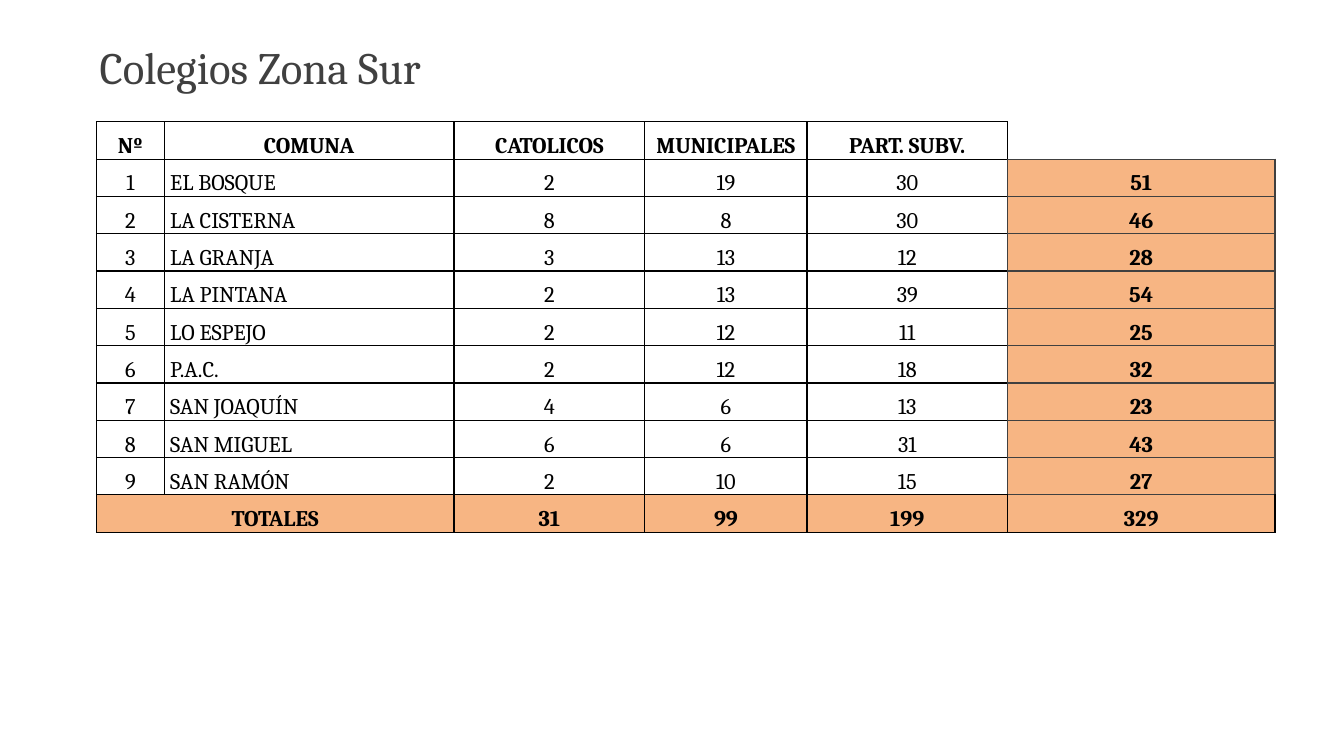
from dataclasses import dataclass
from typing import Optional

from lxml.etree import SubElement
from pptx import Presentation
from pptx.dml.color import RGBColor
from pptx.enum.text import MSO_ANCHOR, PP_ALIGN
from pptx.oxml import parse_xml
from pptx.oxml.ns import nsdecls, qn
from pptx.slide import Slide
from pptx.table import Table
from pptx.text.text import TextFrame
from pptx.util import Cm, Pt


@dataclass(frozen=True)
class Theme:
    font: str = "Cambria"
    black: str = "000000"
    gray: str = "404040"
    orange: str = "F7B583"
    title: int = 32
    body: int = 16
    line: int = 1


@dataclass(frozen=True)
class Comuna:
    name: str
    church: int
    city: int
    private: int

    @property
    def counts(self) -> list[int]:
        return [self.church, self.city, self.private]


THEME = Theme()
HEADS = ["Nº", "COMUNA", "CATOLICOS", "MUNICIPALES", "PART. SUBV."]
COMUNAS = [
    Comuna("EL BOSQUE", 2, 19, 30),
    Comuna("LA CISTERNA", 8, 8, 30),
    Comuna("LA GRANJA", 3, 13, 12),
    Comuna("LA PINTANA", 2, 13, 39),
    Comuna("LO ESPEJO", 2, 12, 11),
    Comuna("P.A.C.", 2, 12, 18),
    Comuna("SAN JOAQUÍN", 4, 6, 13),
    Comuna("SAN MIGUEL", 6, 6, 31),
    Comuna("SAN RAMÓN", 2, 10, 15),
]
WIDTHS = [1.9, 1.71, 7.3, 4.81, 4.09, 5.05, 6.74]
HEIGHT = 0.94
# An empty margin surrounds the data: one row above and below, one column at left.
HEAD, FIRST = 1, 2
TOTAL = FIRST + len(COMUNAS)
ROWS = TOTAL + 2
NAME, SUM = 2, len(WIDTHS) - 1
SIDES = {"lnL": (0, -1), "lnR": (0, 1), "lnT": (-1, 0), "lnB": (1, 0)}


def write(frame: TextFrame, text: str, *, size: int, color: str,
          bold: bool = False, align: PP_ALIGN = PP_ALIGN.LEFT,
          spacing: float = 1.0) -> None:
    para = frame.paragraphs[0]
    para.alignment = align
    para.line_spacing = spacing
    run = para.add_run()
    run.text = text
    run.font.name = THEME.font
    run.font.size = Pt(size)
    run.font.bold = bold
    run.font.color.rgb = RGBColor.from_string(color)


def is_sum(row: int, col: int) -> bool:
    return col == SUM and FIRST <= row < TOTAL


def edge(row: int, col: int, side: str) -> Optional[str]:
    """Colour of a cell side, agreed with the neighbour that shares it."""
    down, right = SIDES[side]
    pair = [(row, col), (row + down, col + right)]
    if any(is_sum(*spot) for spot in pair):
        return THEME.gray
    framed = any(HEAD <= y <= TOTAL and 1 <= x <= SUM and (y, x) != (HEAD, SUM)
                 for y, x in pair)
    return THEME.black if framed else None


def style(table: Table, row: int, col: int) -> None:
    """Set the margins, fill and borders of one cell."""
    cell = table.cell(row, col)
    cell.vertical_anchor = MSO_ANCHOR.BOTTOM
    named = col == NAME and FIRST <= row < TOTAL
    cell.margin_left = Cm(0.15 if named else 0.03)
    cell.margin_right = cell.margin_top = Cm(0.03)
    cell.margin_bottom = 0
    if is_sum(row, col) or (row == TOTAL and col > 0):
        cell.fill.solid()
        cell.fill.fore_color.rgb = RGBColor.from_string(THEME.orange)
    else:
        cell.fill.background()
    props = cell._tc.get_or_add_tcPr()
    for spot, side in enumerate(SIDES):
        color = edge(row, col, side)
        line = parse_xml(f'<a:{side} {nsdecls("a")} w="{Pt(THEME.line)}"/>')
        if color:
            paint = SubElement(line, qn("a:solidFill"))
            SubElement(paint, qn("a:srgbClr"), val=color)
        else:
            SubElement(line, qn("a:noFill"))
        props.insert(spot, line)


def lines() -> list[list[str]]:
    """Texts of the data rows, from the heads to the totals."""
    body = [[i, c.name, *c.counts, sum(c.counts)] for i, c in enumerate(COMUNAS, 1)]
    sums = [sum(col) for col in zip(*(c.counts for c in COMUNAS))]
    last = ["TOTALES", "", *sums, sum(sums)]
    return [[str(item) for item in row] for row in [HEADS, *body, last]]


def add_grid(slide: Slide) -> None:
    shape = slide.shapes.add_table(ROWS, len(WIDTHS), Cm(0.53), Cm(2.13),
                                   Cm(sum(WIDTHS)), Cm(HEIGHT * ROWS))
    table = shape.table
    table.first_row = table.horz_banding = False
    for col, width in zip(table.columns, WIDTHS):
        col.width = Cm(width)
    for line in table.rows:
        line.height = Cm(HEIGHT)
    for row in range(ROWS):
        for col in range(len(WIDTHS)):
            style(table, row, col)
    table.cell(TOTAL, 1).merge(table.cell(TOTAL, NAME))
    for row, texts in enumerate(lines(), HEAD):
        plain = FIRST <= row < TOTAL
        for col, text in enumerate(texts, 1):
            if text:
                left = plain and col == NAME
                write(table.cell(row, col).text_frame, text, size=THEME.body,
                      color=THEME.black, bold=not plain or col == SUM,
                      align=PP_ALIGN.LEFT if left else PP_ALIGN.CENTER)


def add_title(slide: Slide) -> None:
    box = slide.shapes.add_textbox(Cm(2.26), 0, Cm(30.48), Cm(2.51))
    frame = box.text_frame
    frame.word_wrap = True
    frame.vertical_anchor = MSO_ANCHOR.BOTTOM
    write(frame, "Colegios Zona Sur", size=THEME.title, color=THEME.gray, spacing=0.9)


def main() -> None:
    deck = Presentation()
    deck.slide_width, deck.slide_height = Cm(33.87), Cm(19.05)
    slide = deck.slides.add_slide(deck.slide_layouts[6])
    add_grid(slide)
    add_title(slide)
    deck.save("out.pptx")


if __name__ == "__main__":
    main()
